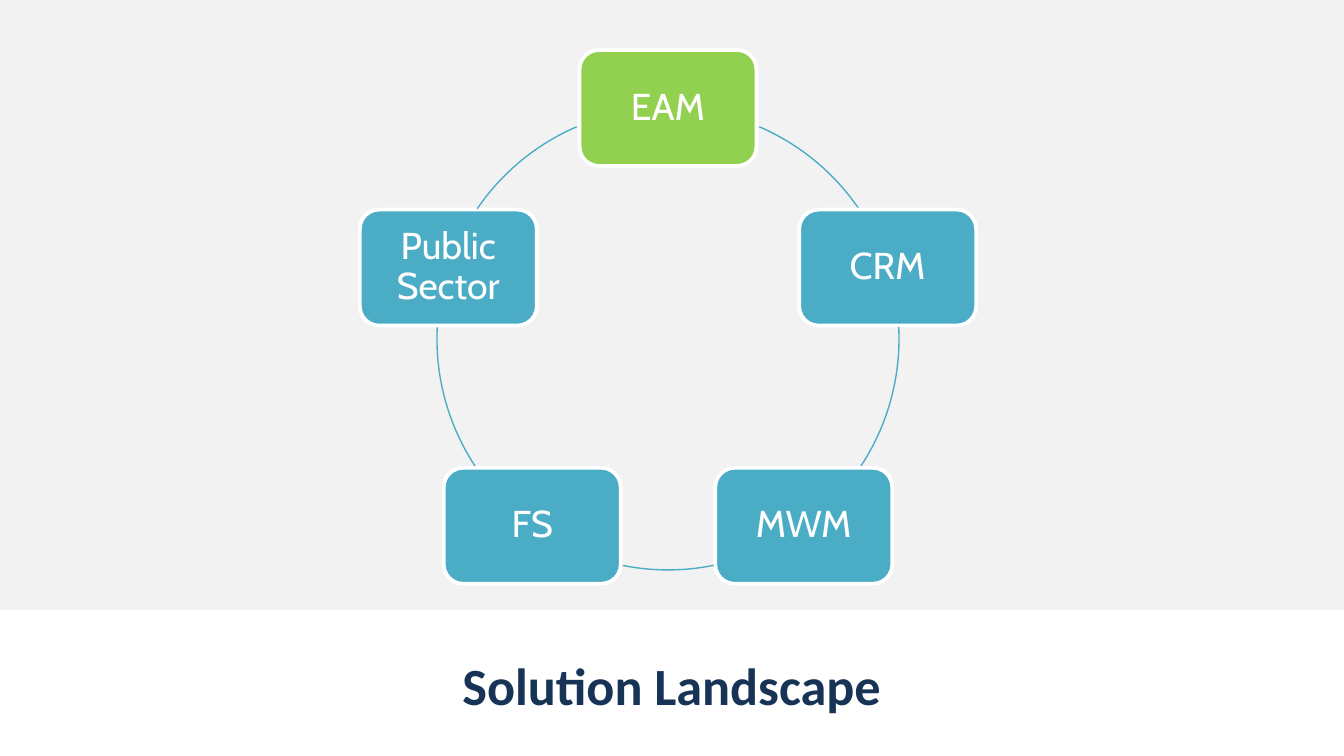
from math import cos, radians, sin

from pptx import Presentation
from pptx.dml.color import RGBColor
from pptx.enum.shapes import MSO_SHAPE
from pptx.enum.text import MSO_ANCHOR, PP_ALIGN
from pptx.util import Emu, Pt

RECT, ROUND, ARC = MSO_SHAPE.RECTANGLE, MSO_SHAPE.ROUNDED_RECTANGLE, MSO_SHAPE.ARC
CENTER, MIDDLE = PP_ALIGN.CENTER, MSO_ANCHOR.MIDDLE
PX = 914400 / 134.4
COLORS = {"band": "F2F2F2", "navy": "173456", "green": "92D050",
          "teal": "4BACC6", "white": "FFFFFF"}


def add_shape(kind, x, y, w, h, fill=None, line=None, weight=1):
    sp = s.shapes.add_shape(kind, *(Emu(round(v * PX)) for v in (x, y, w, h)))
    sp.shadow.inherit = False
    if fill:
        sp.fill.solid()
        sp.fill.fore_color.rgb = RGBColor.from_string(COLORS[fill])
    else:
        sp.fill.background()
    if line:
        sp.line.color.rgb = RGBColor.from_string(COLORS[line])
        sp.line.width = Pt(weight)
    else:
        sp.line.fill.background()
    return sp


def write(sp, text, font, size, color, bold=False, spacing=1.0, inset=0):
    tf = sp.text_frame
    tf.word_wrap = True
    tf.vertical_anchor = MIDDLE
    tf.margin_left = tf.margin_right = Emu(round(inset * PX))
    tf.margin_top = tf.margin_bottom = Emu(round(inset * PX))
    p = tf.paragraphs[0]
    p.alignment = CENTER
    p.line_spacing = spacing
    r = p.add_run()
    r.text = text
    r.font.name = font
    r.font.size = Pt(size)
    r.font.bold = bold
    r.font.color.rgb = RGBColor.from_string(COLORS[color])


prs = Presentation()
prs.slide_width, prs.slide_height = Emu(round(1344 * PX)), Emu(round(756 * PX))
s = prs.slides.add_slide(prs.slide_layouts[6])

add_shape(RECT, 0, 0, 1344, 610, fill="band")
title = s.shapes.add_textbox(*(Emu(round(v * PX)) for v in (301, 642, 741, 85)))
write(title, "Solution Landscape", "Calibri", 28, "navy", bold=True)

# Cycle: nodes clockwise from the top, arcs between neighbours (degrees)
CX, CY, RADIUS = 668, 339, 231
NODE_W, NODE_H = 177, 116
nodes = ["EAM", "CRM", "MWM", "FS", "Public Sector"]
arcs = [(293.3, 325.7), (357, 33.4), (78.6, 101.4), (146.6, 183), (214.3, 246.7)]

for i, (name, (start, end)) in enumerate(zip(nodes, arcs)):
    angle = radians(360 / len(nodes) * i - 90)
    x, y = CX + RADIUS * cos(angle), CY + RADIUS * sin(angle)
    node = add_shape(ROUND, x - NODE_W / 2, y - NODE_H / 2, NODE_W, NODE_H,
                     fill="teal" if i else "green", line="white", weight=2)
    write(node, name, "Cabin", 20, "white", spacing=0.9, inset=16)

    arc = add_shape(ARC, CX - RADIUS, CY - RADIUS, 2 * RADIUS, 2 * RADIUS,
                    line="teal", weight=0.75)
    # An angle is stored in 1/60000 degree, an adjustment in 1/100000
    arc.adjustments[0] = start * 0.6
    arc.adjustments[1] = end * 0.6

prs.save("out.pptx")
